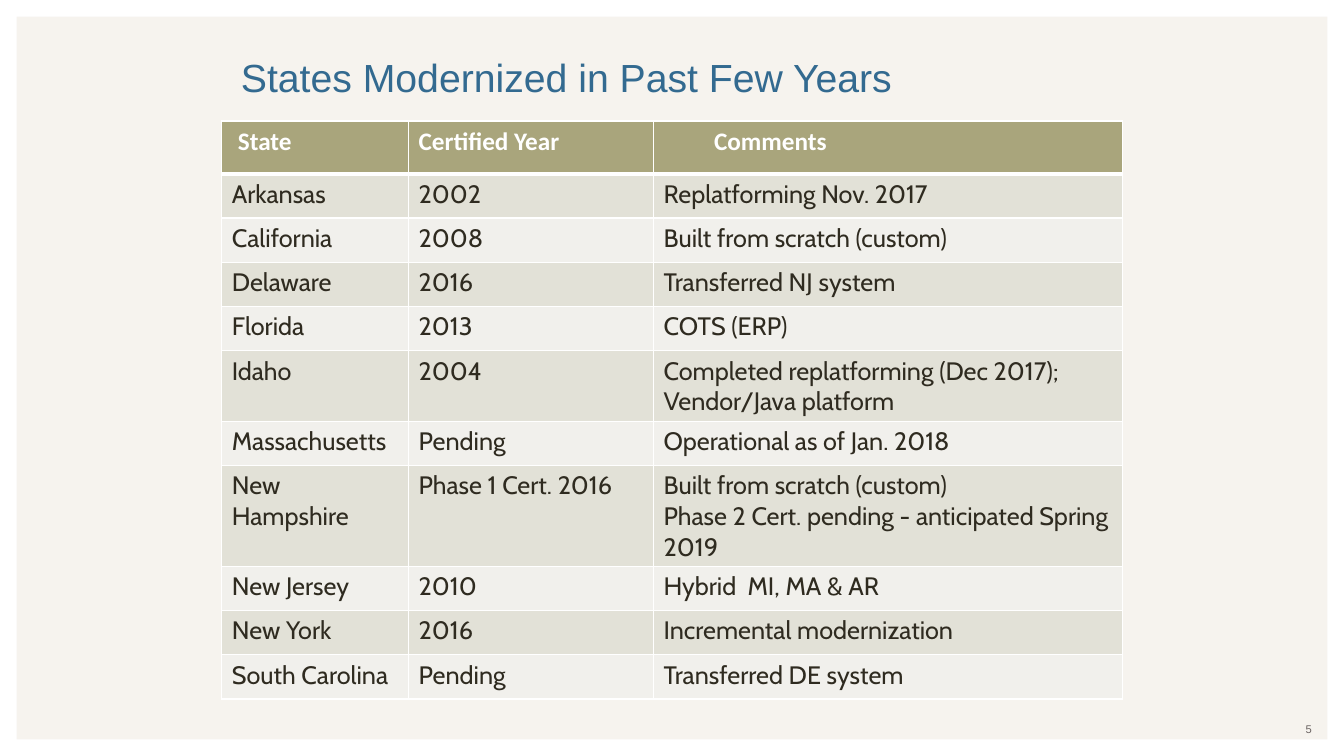
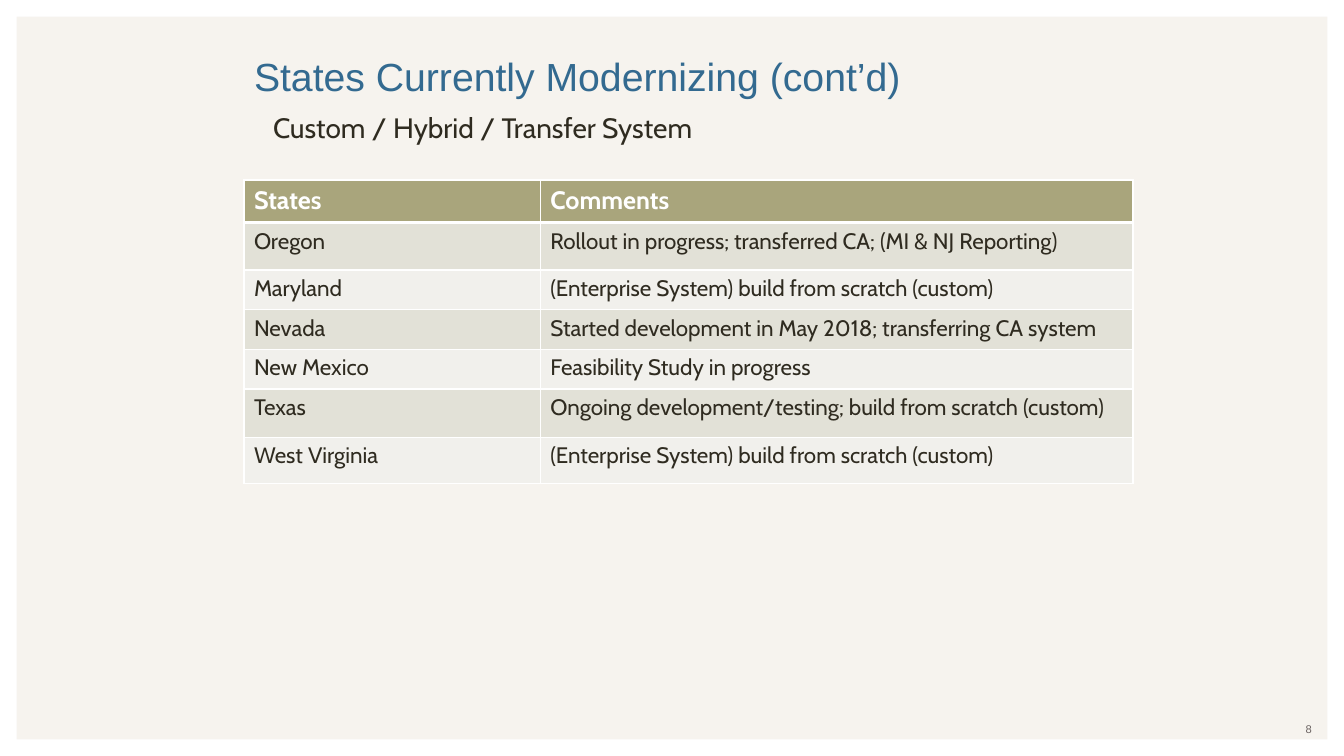
from lxml import etree
from pptx import Presentation
from pptx.dml.color import RGBColor
from pptx.enum.shapes import MSO_SHAPE
from pptx.enum.text import MSO_ANCHOR, MSO_AUTO_SIZE, PP_ALIGN
from pptx.oxml.ns import qn
from pptx.util import Inches, Pt

FRAME = MSO_SHAPE.FRAME
MIDDLE, BOTTOM = MSO_ANCHOR.MIDDLE, MSO_ANCHOR.BOTTOM
LEFT, RIGHT = PP_ALIGN.LEFT, PP_ALIGN.RIGHT
NO_FIT = MSO_AUTO_SIZE.NONE

# Shared colours and fonts
PAPER = RGBColor(0xF6, 0xF3, 0xEE)
WHITE = RGBColor(0xFF, 0xFF, 0xFF)
BLUE = RGBColor(0x33, 0x6A, 0x90)
INK = RGBColor(0x2F, 0x2B, 0x20)
GREY = RGBColor(0x6C, 0x64, 0x63)
OLIVE = RGBColor(0xA9, 0xA5, 0x7C)
BANDS = (RGBColor(0xE2, 0xE1, 0xD7), RGBColor(0xF1, 0xF0, 0xEC))
HEAD_FONT, BODY_FONT = "Arial", "Cabin"

SLIDE_W, SLIDE_H = Inches(13.33), Inches(7.5)
TITLE_ONLY = 5

# Table content, header row first
MODERNIZED = [
    ("State", "Certified Year", "Comments"),
    ("Arkansas", "2002", "Replatforming Nov. 2017"),
    ("California", "2008", "Built from scratch (custom)"),
    ("Delaware", "2016", "Transferred NJ system"),
    ("Florida", "2013", "COTS (ERP)"),
    ("Idaho", "2004",
     "Completed replatforming (Dec 2017); Vendor/Java platform"),
    ("Massachusetts", "Pending", "Operational as of Jan. 2018"),
    ("New Hampshire", "Phase 1 Cert. 2016",
     "Built from scratch (custom)\n"
     "Phase 2 Cert. pending - anticipated Spring 2019"),
    ("New Jersey", "2010", "Hybrid  MI, MA & AR"),
    ("New York", "2016", "Incremental modernization"),
    ("South Carolina", "Pending", "Transferred DE system"),
]
MODERNIZING = [
    ("States", "Comments"),
    ("Oregon", "Rollout in progress; transferred CA; (MI & NJ Reporting)"),
    ("Maryland", "(Enterprise System) build from scratch (custom)"),
    ("Nevada", "Started development in May 2018; transferring CA system"),
    ("New Mexico", "Feasibility Study in progress"),
    ("Texas", "Ongoing development/testing; build from scratch (custom)"),
    ("West Virginia", "(Enterprise System) build from scratch (custom)"),
]


def across(percent):
    return round(SLIDE_W * percent / 100)


def down(percent):
    return round(SLIDE_H * percent / 100)


def box(left, top, width, height):
    """Turn shares of the slide, in percent, into lengths."""
    return across(left), down(top), across(width), down(height)


def write(p, text, size, font, color, bold=False, align=LEFT):
    p.alignment = align
    r = p.add_run()
    r.text = text
    r.font.size, r.font.name, r.font.bold = Pt(size), font, bold
    r.font.color.rgb = color


def add_text(s, area, text, size, font, color, align=LEFT, anchor=None):
    tf = s.shapes.add_textbox(*area).text_frame
    tf.word_wrap = True
    tf.vertical_anchor = anchor
    write(tf.paragraphs[0], text, size, font, color, align=align)


def set_up_master(prs, s):
    """Give the master its background and white frame, drawn first on s."""
    master = prs.slide_master
    master.background.fill.solid()
    master.background.fill.fore_color.rgb = PAPER
    frame = s.shapes.add_shape(FRAME, *box(0, 0, 100, 100))
    frame.adjustments[0] = 0.022
    frame.shadow.inherit = False
    frame.fill.solid()
    frame.fill.fore_color.rgb = WHITE
    frame.line.fill.background()
    frame.element.nvSpPr.cNvPr.id = 99
    master.shapes.element.insert(2, frame.element)


def add_slide(prs, title, title_left, title_top, number):
    s = prs.slides.add_slide(prs.slide_layouts[TITLE_ONLY])
    sp = s.shapes.title
    sp.left, sp.top, sp.width, sp.height = box(title_left, title_top, 63.75, 8.6)
    tf = sp.text_frame
    tf.auto_size, tf.vertical_anchor, tf.word_wrap = NO_FIT, BOTTOM, True
    write(tf.paragraphs[0], title, 28, HEAD_FONT, BLUE)
    # Page number
    add_text(s, box(75, 94.8, 23.35, 3.2), str(number), 8, HEAD_FONT, GREY,
             RIGHT, MIDDLE)
    return s


def set_borders(cell, top, bottom):
    """Draw white cell borders; must run before the cell is filled."""
    tcPr = cell._tc.get_or_add_tcPr()
    for side, width in (("L", 1), ("R", 1), ("T", top), ("B", bottom)):
        ln = etree.SubElement(tcPr, qn(f"a:ln{side}"), w=str(Pt(width)))
        fill = etree.SubElement(ln, qn("a:solidFill"))
        etree.SubElement(fill, qn("a:srgbClr"), val=str(WHITE))


def add_table(s, left, top, cols, heights, rows, size, head_font=BODY_FONT):
    """Add a banded table; cols and heights are shares of the slide."""
    area = box(left, top, sum(cols), sum(heights))
    table = s.shapes.add_table(len(rows), len(cols), *area).table
    for col, width in zip(table.columns, cols):
        col.width = across(width)
    for i, (row, height, texts) in enumerate(zip(table.rows, heights, rows)):
        row.height = down(height)
        head = i == 0
        style = ((18, head_font, WHITE, True) if head
                 else (size, BODY_FONT, INK))
        for cell, text in zip(row.cells, texts):
            set_borders(cell, 3 if i == 1 else 1, 3 if head else 1)
            cell.fill.solid()
            cell.fill.fore_color.rgb = OLIVE if head else BANDS[(i - 1) % 2]
            tf = cell.text_frame
            for j, line in enumerate(text.split("\n")):
                p = tf.add_paragraph() if j else tf.paragraphs[0]
                write(p, line, *style)
    return table


def main():
    prs = Presentation()
    prs.slide_width, prs.slide_height = SLIDE_W, SLIDE_H

    # States already modernized
    s = add_slide(prs, "States Modernized in Past Few Years", 17.18, 5.4, 5)
    set_up_master(prs, s)
    table = add_table(s, 16.5, 16, (13.9, 18.23, 34.88), [7] + [5.85] * 10,
                      MODERNIZED, 18, "Calibri")
    table.cell(0, 0).margin_left = Inches(0.16)
    table.cell(0, 2).margin_left = Inches(0.6)

    # States still modernizing
    s = add_slide(prs, "States Currently Modernizing (cont’d)", 18.15, 5.2, 8)
    add_text(s, box(19.58, 14, 60.84, 5.87),
             "Custom / Hybrid / Transfer System", 20, BODY_FONT, INK)
    add_table(s, 18.15, 23.8, (22.05, 44.1),
              (5.65, 6.27, 5.25, 5.25, 5.25, 6.4, 6.13), MODERNIZING, 16)

    prs.save("out.pptx")


if __name__ == "__main__":
    main()
